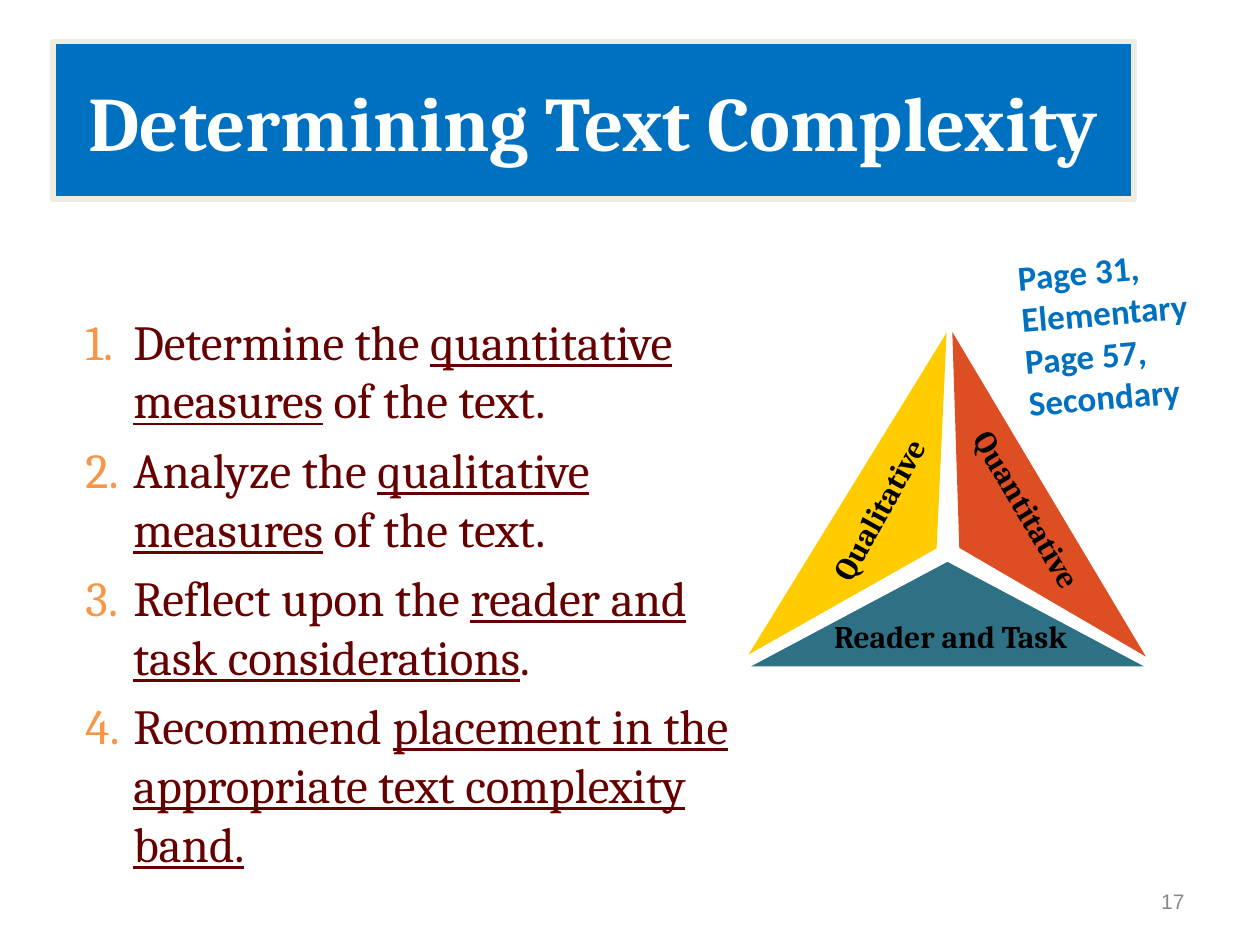
from lxml import etree
from pptx import Presentation
from pptx.dml.color import RGBColor
from pptx.enum.shapes import MSO_SHAPE
from pptx.enum.text import MSO_ANCHOR, PP_ALIGN
from pptx.oxml.ns import qn
from pptx.util import Inches, Pt

RECT = MSO_SHAPE.RECTANGLE
TRIANGLE = MSO_SHAPE.ISOSCELES_TRIANGLE
LEFT, CENTER, RIGHT = PP_ALIGN.LEFT, PP_ALIGN.CENTER, PP_ALIGN.RIGHT
TOP, MIDDLE = MSO_ANCHOR.TOP, MSO_ANCHOR.MIDDLE

STEPS = [
    ("Determine the ", "quantitative measures", " of the text."),
    ("Analyze the ", "qualitative measures", " of the text."),
    ("Reflect upon the ", "reader and task considerations", "."),
    ("Recommend ", "placement in the appropriate text complexity band.", ""),
]
PIECES = [
    ("Qualitative", "FFCC00", (5.58, 3.72, 3, 0.83), 121.6,
     (6.14, 3.84, 1.66, 0.4), 299.2),
    ("Quantitative", "DD4F23", (6.47, 3.72, 3, 0.83), 239.2,
     (7.32, 3.84, 1.67, 0.4), 59.3),
    ("Reader and Task", "2E7084", (5.96, 4.46, 3.12, 0.83), 0,
     (6.38, 4.85, 2.33, 0.4), 0),
]


def color(code):
    return RGBColor.from_string(code)


def style(para, size, face, code, bold=False, align=LEFT):
    para.alignment = align
    font = para.font
    font.size = Pt(size)
    font.name = face
    font.bold = bold
    font.color.rgb = color(code)


def add_shape(shapes, kind, box, fill, turn=0):
    shape = shapes.add_shape(kind, *map(Inches, box))
    shape.shadow.inherit = False
    shape.rotation = turn
    shape.fill.solid()
    shape.fill.fore_color.rgb = color(fill)
    shape.line.fill.background()
    return shape


def add_text(shapes, box, lines, look, turn=0, wrap=True, anchor=TOP):
    label = shapes.add_textbox(*map(Inches, box))
    label.rotation = turn
    frame = label.text_frame
    frame.word_wrap = wrap
    frame.vertical_anchor = anchor
    frame.text = "\n".join(lines)
    for para in frame.paragraphs:
        style(para, *look)


def add_title(shapes, text):
    banner = add_shape(shapes, RECT, (0.42, 0.33, 8.58, 1.25), "0070C0")
    banner.line.color.rgb = color("EEECE1")
    banner.line.width = Pt(3)
    frame = banner.text_frame
    frame.vertical_anchor = MIDDLE
    frame.text = text
    style(frame.paragraphs[0], 44, "Cambria", "FFFFFF", True, CENTER)


def add_piece(shapes, text, fill, box, turn, place, tilt):
    group = shapes.add_group_shape()
    add_shape(group.shapes, TRIANGLE, box, fill, turn)
    look = (18, "Cambria", "000000", True, CENTER)
    add_text(group.shapes, place, [text], look, tilt, wrap=False)


def number(para, code):
    props = para._p.get_or_add_pPr()
    props.set("marL", str(Inches(0.88)))
    props.set("indent", str(Inches(-0.38)))
    tint = etree.Element(qn("a:buClr"))
    etree.SubElement(tint, qn("a:srgbClr"), val=code)
    mark = etree.Element(qn("a:buAutoNum"), type="arabicPeriod")
    rest = props.find(qn("a:defRPr"))
    rest.addprevious(tint)
    rest.addprevious(mark)


def add_steps(shapes, box, steps):
    frame = shapes.add_textbox(*map(Inches, box)).text_frame
    frame.word_wrap = True
    for i, parts in enumerate(steps):
        para = frame.add_paragraph() if i else frame.paragraphs[0]
        style(para, 28, "Cambria", "660000")
        para.space_before = Pt(6)
        number(para, "F79646")
        for j, part in enumerate(parts):
            if part:
                run = para.add_run()
                run.text = part
                run.font.underline = j == 1


def main():
    deck = Presentation()
    deck.slide_width = Inches(10)
    deck.slide_height = Inches(7.5)
    shapes = deck.slides.add_slide(deck.slide_layouts[6]).shapes
    add_text(shapes, (7.17, 6.95, 2.33, 0.4), ["17"],
             (12, "Arial", "898989", False, RIGHT), anchor=MIDDLE)
    add_title(shapes, "Determining Text Complexity")
    add_steps(shapes, (0.08, 2.42, 5.84, 4.59), STEPS)
    for piece in PIECES:
        add_piece(shapes, *piece)
    add_text(shapes, (8.02, 1.91, 1.86, 1.45),
             ["Page 31, Elementary", "Page 57, Secondary"],
             (20, "Calibri", "0070C0", True), 355.1)
    deck.save("out.pptx")


if __name__ == "__main__":
    main()
